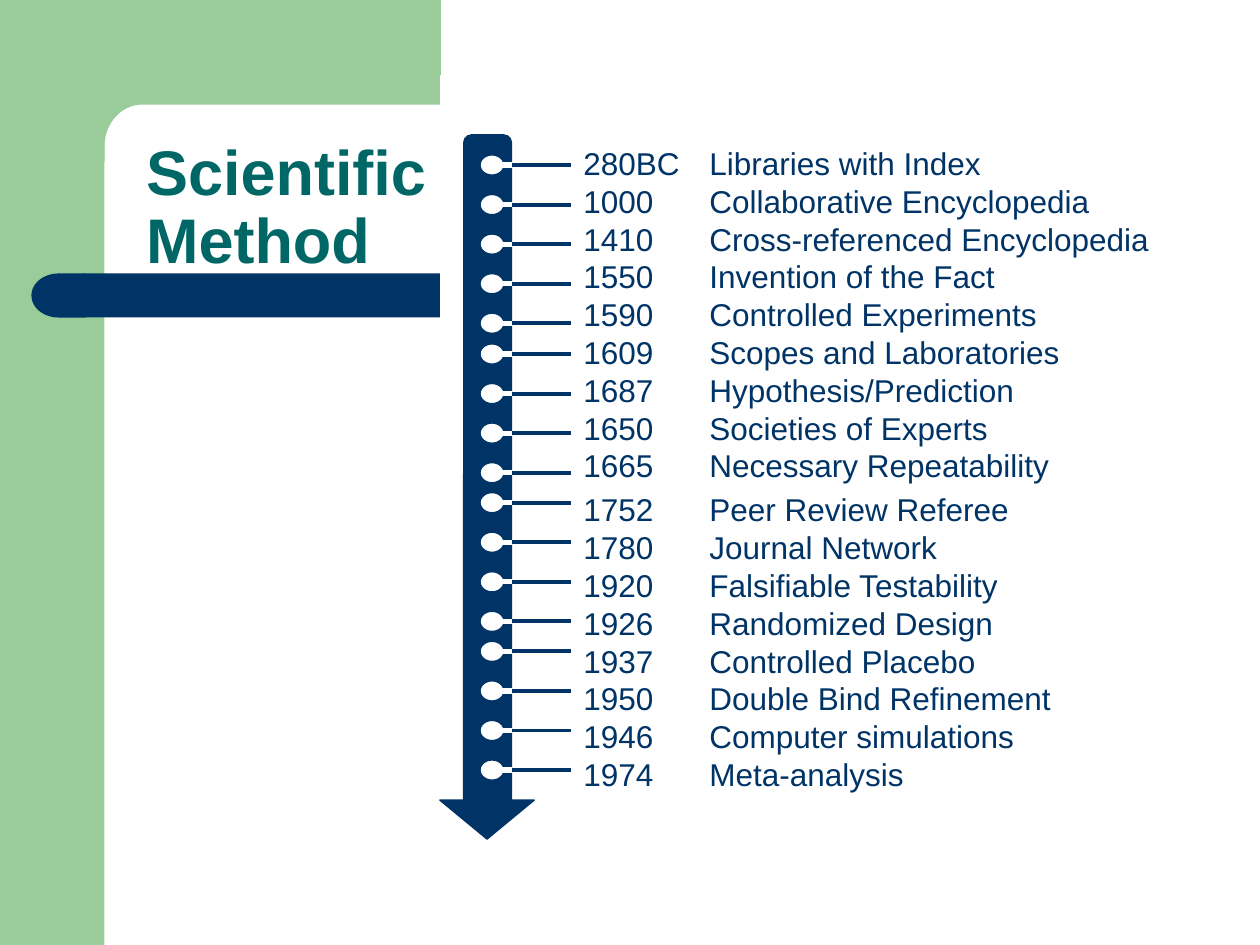
import math

import pptx
import pptx.dml.color
import pptx.enum.shapes
import pptx.enum.text
import pptx.oxml.ns
import pptx.util
from lxml import etree

Inches = pptx.util.Inches
Pt = pptx.util.Pt
SHAPE = pptx.enum.shapes.MSO_SHAPE
GREEN = pptx.dml.color.RGBColor(0x99, 0xCC, 0x99)
NAVY = pptx.dml.color.RGBColor(0x00, 0x33, 0x66)
TEAL = pptx.dml.color.RGBColor(0x00, 0x66, 0x66)
WHITE = pptx.dml.color.RGBColor(0xFF, 0xFF, 0xFF)

EARLY = [
    ("280BC", "Libraries with Index"),
    ("1000", "Collaborative Encyclopedia"),
    ("1410", "Cross-referenced Encyclopedia"),
    ("1550", "Invention of the Fact"),
    ("1590", "Controlled Experiments"),
    ("1609", "Scopes and Laboratories"),
    ("1687", "Hypothesis/Prediction"),
    ("1650", "Societies of Experts"),
    ("1665", "Necessary Repeatability"),
]
LATE = [
    ("1752", "Peer Review Referee"),
    ("1780", "Journal Network"),
    ("1920", "Falsifiable Testability"),
    ("1926", "Randomized Design"),
    ("1937", "Controlled Placebo"),
    ("1950", "Double Bind Refinement"),
    ("1946", "Computer simulations"),
    ("1974", "Meta-analysis"),
]

prs = pptx.Presentation()
prs.slide_width, prs.slide_height = Inches(10), Inches(7.5)
s = prs.slides.add_slide(prs.slide_layouts[3])
title, early_body, late_body = s.placeholders


def add_shape(kind, x, y, w, h, fill, line=None):
    sp = s.shapes.add_shape(kind, Inches(x), Inches(y), Inches(w), Inches(h))
    sp.shadow.inherit = False
    sp.fill.solid()
    sp.fill.fore_color.rgb = fill
    if line is None:
        sp.line.fill.background()
    else:
        sp.line.color.rgb = line
        sp.line.width = Pt(0.75)
    return sp


def add_line(x1, x2, y, color, width):
    c = s.shapes.add_connector(pptx.enum.shapes.MSO_CONNECTOR.STRAIGHT,
                               Inches(x1), Inches(y), Inches(x2), Inches(y))
    c.line.color.rgb = color
    c.line.width = Pt(width)
    etree.SubElement(c._element.spPr, pptx.oxml.ns.qn("a:effectLst"))


# Green frame with a rounded inner corner, and the navy title bar
add_shape(SHAPE.RECTANGLE, 0, 0, 0.83, 7.5, GREEN)
arc = [(1.13 - 0.3 * math.sin(math.radians(a)), 1.16 - 0.33 * math.cos(math.radians(a)))
       for a in range(0, 91, 5)]
outline = [(3.5, 0), (3.5, 0.83), *arc, (0.83, 1.28), (0.5, 1.28)]
builder = s.shapes.build_freeform(Inches(0.5), 0)
builder.add_line_segments([(Inches(x), Inches(y)) for x, y in outline])
corner = builder.convert_to_shape()
corner.shadow.inherit = False
corner.fill.solid()
corner.fill.fore_color.rgb = GREEN
corner.line.fill.background()
add_shape(SHAPE.RECTANGLE, 0.67, 2.17, 7.67, 0.35, NAVY)
bar_end = add_shape(SHAPE.FLOWCHART_DELAY, 0.25, 2.17, 0.43, 0.35, NAVY)
bar_end._element.spPr.xfrm.set("flipH", "1")
add_shape(SHAPE.RECTANGLE, 3.5, 0.6, 6.14, 6.74, WHITE, WHITE)

# Title
s.shapes._spTree.append(title._element)
title.left, title.top, title.width, title.height = map(Inches, (1.06, 0.68, 8.67, 1.57))
tf = title.text_frame
tf.auto_size = pptx.enum.text.MSO_AUTO_SIZE.NONE
tf.vertical_anchor = pptx.enum.text.MSO_ANCHOR.BOTTOM
p = tf.paragraphs[0]
p.text = "Scientific\vMethod"
p.alignment = pptx.enum.text.PP_ALIGN.LEFT
p.line_spacing = 0.9
for r in p.runs:
    r.font.name = "Arial"
    r.font.size = Pt(36)
    r.font.bold = True
    r.font.color.rgb = TEAL

# Dated lists, the descriptions aligned on a tab stop
for body, box, entries in ((early_body, (4.53, 1.15, 5.27, 3.29), EARLY),
                           (late_body, (4.53, 3.9, 5.19, 2.84), LATE)):
    s.shapes._spTree.append(body._element)
    body.left, body.top, body.width, body.height = map(Inches, box)
    tf = body.text_frame
    tf.auto_size = pptx.enum.text.MSO_AUTO_SIZE.NONE
    tf.text = "\n".join(f"{year}\t{event}" for year, event in entries)
    for i, p in enumerate(tf.paragraphs):
        pPr = p._p.get_or_add_pPr()
        pPr.set("marL", "0")
        pPr.set("indent", "0")
        etree.SubElement(pPr, pptx.oxml.ns.qn("a:buNone"))
        tabs = etree.SubElement(pPr, pptx.oxml.ns.qn("a:tabLst"))
        etree.SubElement(tabs, pptx.oxml.ns.qn("a:tab"), pos=str(Inches(0.9)), algn="l")
        p.line_spacing = 0.8
        p.space_before = Pt(4.3 if i else 0)
        r = p.runs[0]
        r.font.name = "Arial"
        r.font.size = Pt(18)
        r.font.color.rgb = NAVY

# Timeline: dots in four evenly spaced groups, each with a tick to the lists
add_shape(SHAPE.ROUNDED_RECTANGLE, 3.68, 1.07, 0.38, 5.35, NAVY, NAVY)
groups = ((1.31, 5), (2.81, 4), (3.99, 4), (5.17, 4))
dot_centers = [start + 0.314 * i for start, count in groups for i in range(count)]
for y in dot_centers:
    add_shape(SHAPE.OVAL, 3.81, y - 0.08, 0.19, 0.16, WHITE, NAVY)
for y in dot_centers:
    add_line(3.97, 4.53, y, NAVY, 2.25)
    add_line(3.97, 4.06, y, WHITE, 3)
arrow_tip = add_shape(SHAPE.ISOSCELES_TRIANGLE, 3.49, 6.35, 0.75, 0.31, NAVY, NAVY)
arrow_tip.rotation = 180

prs.save("out.pptx")
